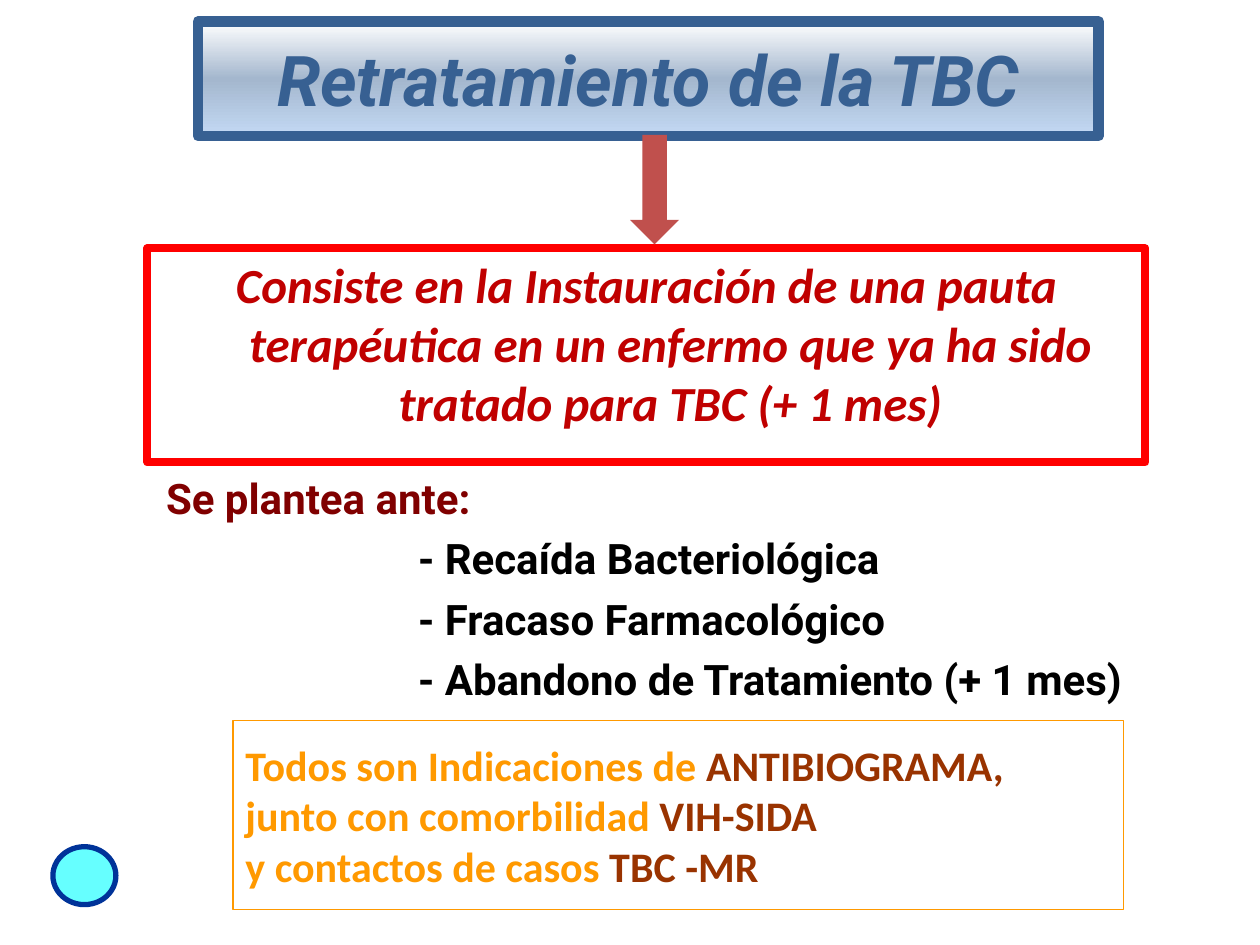
from lxml import etree
from pptx import Presentation
from pptx.dml.color import RGBColor
from pptx.enum import shapes, text
from pptx.oxml.ns import qn
from pptx.util import Inches, Pt

COLORS = {
    "blue": "376092", "mist": "A4B7CE", "sky": "C3D9F4", "white": "FFFFFF",
    "red": "FF0000", "crimson": "C00000", "maroon": "800000", "black": "000000",
    "orange": "FF9900", "brown": "993300", "brick": "C0504D",
    "cyan": "66FFFF", "navy": "003399",
}


def rgb(name):
    return RGBColor.from_string(COLORS[name])


class SlideBuilder:
    """Holds the style and the slide being filled."""

    def __init__(self, prs):
        self.s = prs.slides.add_slide(prs.slide_layouts[0])

    def place(self, sp, box):
        sp.left, sp.top, sp.width, sp.height = (Inches(v) for v in box)

    def outline(self, sp, color, width):
        sp.line.color.rgb = rgb(color)
        sp.line.width = Pt(width)

    def gradient(self, sp, stops):
        """Fill from top to bottom with (percent, color) stops."""
        sp.fill.gradient()
        sp.fill.gradient_angle = 270
        gs_list = sp._element.spPr.find(".//" + qn("a:gsLst"))
        for gs in list(gs_list):
            gs_list.remove(gs)
        for percent, color in stops:
            gs = etree.SubElement(gs_list, qn("a:gs"), pos=str(percent * 1000))
            etree.SubElement(gs, qn("a:srgbClr"), val=COLORS[color])

    def frame(self, sp, anchor):
        tf = sp.text_frame
        tf.word_wrap = True
        tf.auto_size = text.MSO_AUTO_SIZE.NONE
        tf.vertical_anchor = anchor
        return tf

    def font(self, p, name, size, color=None, italic=None):
        p.font.name, p.font.size = name, Pt(size)
        p.font.bold, p.font.italic = True, italic
        if color:
            p.font.color.rgb = rgb(color)

    def indent(self, p, left, first=0):
        pPr = p._p.get_or_add_pPr()
        pPr.set("marL", str(Inches(left)))
        pPr.set("indent", str(Inches(first)))

    def placeholder(self, idx, box, content, font, size, color, line, anchor):
        sp = self.s.placeholders[idx]
        self.place(sp, box)
        self.outline(sp, *line)
        tf = self.frame(sp, anchor)
        tf.text = content
        p = tf.paragraphs[0]
        p.alignment = text.PP_ALIGN.CENTER
        self.font(p, font, size, color, italic=True)
        return sp

    def shape(self, kind, box, fill=None, line=None):
        sp = self.s.shapes.add_shape(kind, *(Inches(v) for v in box))
        sp.shadow.inherit = False
        if fill:
            sp.fill.solid()
            sp.fill.fore_color.rgb = rgb(fill)
        else:
            sp.fill.background()
        if line:
            self.outline(sp, *line)
        else:
            sp.line.fill.background()
        return sp

    def list_box(self, box, heading, items):
        sp = self.s.shapes.add_textbox(*(Inches(v) for v in box))
        tf = self.frame(sp, text.MSO_ANCHOR.TOP)
        tf.margin_top = 0
        p = tf.paragraphs[0]
        p.text = heading
        self.font(p, "Roboto", 24, "maroon")
        for item in items:
            p = tf.add_paragraph()
            p.text = "- " + item
            p.line_spacing = 1.2
            self.indent(p, 2)
            self.font(p, "Roboto", 24, "black")

    def note_box(self, box, lines):
        """Outlined box; each line is a lead text and a stressed term."""
        sp = self.shape(shapes.MSO_SHAPE.RECTANGLE, box, line=("orange", 0.75))
        tf = self.frame(sp, text.MSO_ANCHOR.MIDDLE)
        for i, parts in enumerate(lines):
            p = tf.add_paragraph() if i else tf.paragraphs[0]
            p.alignment = text.PP_ALIGN.LEFT
            self.font(p, "Calibri", 24)
            for part, color in zip(parts, ("orange", "brown")):
                r = p.add_run()
                r.text = part
                r.font.color.rgb = rgb(color)


def main():
    prs = Presentation()
    prs.slide_width, prs.slide_height = Inches(10), Inches(7.5)
    b = SlideBuilder(prs)

    # Title banner
    title = b.placeholder(0, (1.57, 0.17, 7.15, 0.91), "Retratamiento de la TBC",
                          "Roboto", 40, "blue", ("blue", 6), text.MSO_ANCHOR.MIDDLE)
    b.gradient(title, [(0, "white"), (50, "mist"), (100, "sky")])

    # Definition
    definition = b.placeholder(
        1, (1.17, 1.97, 7.92, 1.7),
        "Consiste en la Instauración de una pauta terapéutica en un enfermo "
        "que ya ha sido tratado para TBC (+ 1 mes)",
        "Calibri", 28, "crimson", ("red", 4.5), text.MSO_ANCHOR.TOP)
    b.indent(definition.text_frame.paragraphs[0], 0.38, -0.38)

    # Plain disc in the corner
    b.shape(shapes.MSO_SHAPE.OVAL, (0.42, 6.72, 0.5, 0.46), "cyan", ("navy", 3))

    # Indications
    b.list_box((1.22, 3.75, 7.84, 2.2), "Se plantea ante:", [
        "Recaída Bacteriológica",
        "Fracaso Farmacológico",
        "Abandono de Tratamiento (+ 1 mes)",
    ])

    # Antibiogram note
    b.note_box((1.85, 5.72, 7.07, 1.5), [
        ("Todos son Indicaciones de ", "ANTIBIOGRAMA,"),
        ("junto con comorbilidad ", "VIH-SIDA"),
        ("y contactos de casos ", "TBC -MR"),
    ])

    # Arrow from title to definition
    b.shape(shapes.MSO_SHAPE.DOWN_ARROW, (5, 1.07, 0.39, 0.87), "brick")

    prs.save("out.pptx")


if __name__ == "__main__":
    main()
